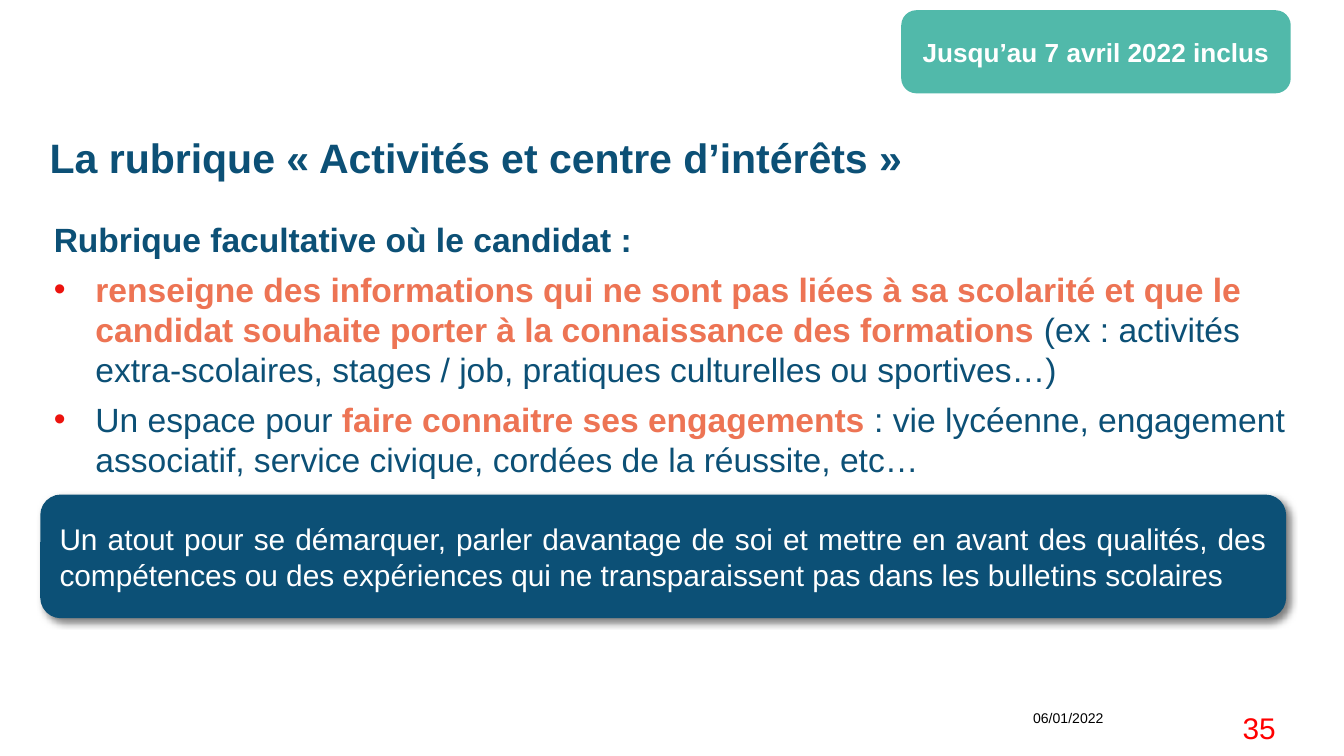
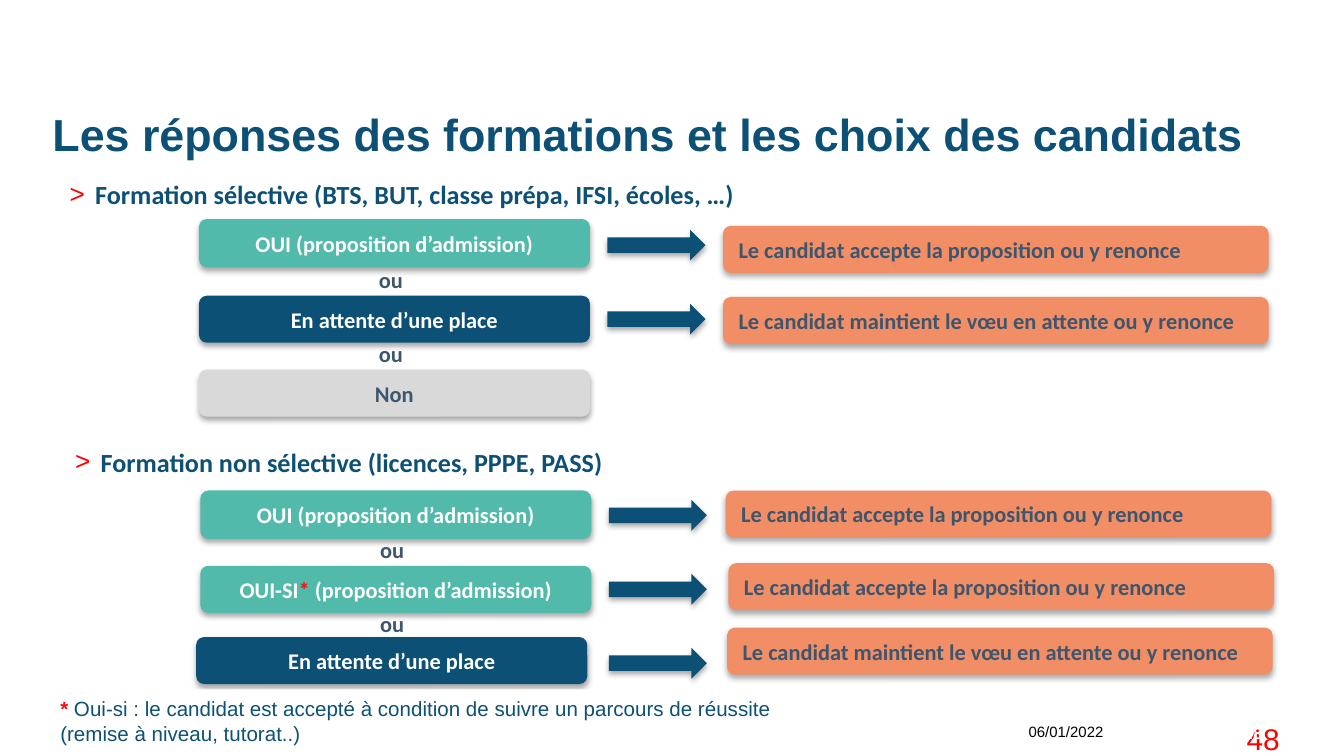
from lxml.etree import SubElement
from pptx import Presentation
from pptx.dml.color import RGBColor
from pptx.enum.shapes import MSO_SHAPE
from pptx.enum.text import MSO_ANCHOR, MSO_AUTO_SIZE, PP_ALIGN
from pptx.oxml.ns import qn
from pptx.util import Inches, Pt

COLORS = {
    "navy": "0C5076", "green": "51B9AA", "mint": "51BAAA", "coral": "ED7454",
    "orange": "F28E65", "slate": "3D566E", "gray": "D9D9D9", "white": "FFFFFF",
    "black": "000000", "red": "FF0000", "crimson": "EC130E",
}
RGB = {name: RGBColor.from_string(value) for name, value in COLORS.items()}

# Shadows: opacity in percent, blur and distance in points, direction in degrees
BANNER_SHADOW = (50, 4, 3, 45)
BUTTON_SHADOW = (35, 3.1, 1.8, 90)


def write(frame, paragraphs, size, color, font="Arial", bold=False,
          align=PP_ALIGN.LEFT, bullet=None, first_bullet=0, after=None):
    """Fill a frame; a paragraph is a string or a list of (text, color, bold)."""
    frame.word_wrap = True
    for index, content in enumerate(paragraphs):
        para = frame.paragraphs[0] if index == 0 else frame.add_paragraph()
        para.alignment = align
        if after is not None:
            para.space_after = Pt(after)
        if bullet and index >= first_bullet:
            mark, mark_color, indent = bullet
            props = para._p.get_or_add_pPr()
            props.set("marL", str(Inches(indent)))
            props.set("indent", str(-Inches(indent)))
            tint = SubElement(props, qn("a:buClr"))
            SubElement(tint, qn("a:srgbClr"), val=COLORS[mark_color])
            SubElement(props, qn("a:buFont"), typeface="Arial")
            SubElement(props, qn("a:buChar"), char=mark)
        para.font.name = font
        para.font.size = Pt(size)
        para.font.bold = bold
        para.font.color.rgb = RGB[color]
        if isinstance(content, str):
            para.add_run().text = content
            continue
        for text, span_color, span_bold in content:
            span = para.add_run()
            span.text = text
            span.font.bold = span_bold
            span.font.color.rgb = RGB[span_color]


def add_box(page, place, fill=None, kind=MSO_SHAPE.ROUNDED_RECTANGLE,
            shadow=None, anchor=MSO_ANCHOR.MIDDLE):
    """Add a filled shape, or a text box when there is no fill."""
    place = [Inches(length) for length in place]
    if fill is None:
        box = page.shapes.add_textbox(*place)
        box.text_frame.vertical_anchor = MSO_ANCHOR.TOP
        return box
    box = page.shapes.add_shape(kind, *place)
    box.fill.solid()
    box.fill.fore_color.rgb = RGB[fill]
    box.line.fill.background()
    box.shadow.inherit = False
    box.text_frame.vertical_anchor = anchor
    if shadow:
        opacity, blur, distance, angle = shadow
        effects = box._element.spPr.find(qn("a:effectLst"))
        outer = SubElement(effects, qn("a:outerShdw"), blurRad=str(Pt(blur)),
                           dist=str(Pt(distance)), dir=str(angle * 60000),
                           algn="ctr", rotWithShape="0")
        tint = SubElement(outer, qn("a:srgbClr"), val=COLORS["black"])
        SubElement(tint, qn("a:alpha"), val=str(opacity * 1000))
    return box


# Widescreen deck, 16 to 9
deck = Presentation()
deck.slide_width = Inches(10)
deck.slide_height = Inches(10) * 9 // 16

# Title, date and page number of each slide
headings = [
    ("La rubrique « Activités et centre d’intérêts »", (0.37, 1.03, 9.21, 0.79), 22,
     7.5, 5.23, "35", (8.31, 5.23, 1.28, 0.39)),
    ("Les réponses des formations et les choix des candidats",
     (0.39, 0.84, 9.61, 0.49), 24, 8, 5.33, "48", (8.34, 5.31, 1.28, 0.39)),
]
pages = []
for text, place, size, date_size, date_top, number, number_place in headings:
    page = deck.slides.add_slide(deck.slide_layouts[5])
    title = page.shapes.title
    title.left, title.top, title.width, title.height = map(Inches, place)
    frame = title.text_frame
    frame.margin_left = frame.margin_right = frame.margin_top = frame.margin_bottom = 0
    frame.vertical_anchor = MSO_ANCHOR.TOP
    frame.auto_size = MSO_AUTO_SIZE.NONE
    write(frame, [text], size, "navy", bold=True)
    frame.paragraphs[0].line_spacing = 0.9
    date = add_box(page, (7.03, date_top, 1.28, 0.39))
    write(date.text_frame, ["06/01/2022"], date_size, "black", align=PP_ALIGN.RIGHT)
    counter = add_box(page, number_place)
    write(counter.text_frame, [number], 16, "red", align=PP_ALIGN.RIGHT)
    pages.append(page)
activities, answers = pages

# Slide 1: optional section and its two points
body = add_box(activities, (0.4, 1.63, 9.21, 3.03))
frame = body.text_frame
frame.margin_left = frame.margin_right = frame.margin_top = frame.margin_bottom = 0
write(frame, [
    [("Rubrique facultative où le candidat :", "navy", True)],
    [("renseigne des informations qui ne sont pas liées à sa scolarité et que le "
      "candidat souhaite porter à la connaissance des formations ", "coral", True),
     ("(ex : activités extra-scolaires, stages / job, pratiques culturelles ou "
      "sportives…)", "navy", False)],
    [("Un espace pour ", "navy", False),
     ("faire connaitre ses engagements ", "coral", True),
     (": vie lycéenne, engagement associatif, service civique, cordées de la "
      "réussite, etc…", "navy", False)],
], 18, "navy", bullet=("•", "crimson", 0.31), first_bullet=1, after=5)

# Slide 1: banner and deadline
banner = add_box(activities, (0.3, 3.68, 9.27, 0.92), "navy", shadow=BANNER_SHADOW)
write(banner.text_frame, [
    "Un atout pour se démarquer, parler davantage de soi et mettre en avant des "
    "qualités, des compétences ou des expériences qui ne transparaissent pas dans "
    "les bulletins scolaires"], 16, "white", align=PP_ALIGN.JUSTIFY)
deadline = add_box(activities, (6.72, 0.09, 2.87, 0.59), "green")
deadline.line.color.rgb = RGB["green"]
deadline.line.width = Pt(2)
write(deadline.text_frame, ["Jusqu’au 7 avril 2022 inclus"], 14, "white",
      bold=True, align=PP_ALIGN.CENTER)

# Slide 2: each answer has left, top, height, label, fill, text color
# and the candidate's reply (left, top, text)
YES = "OUI (proposition d’admission)"
YES_IF = [("OUI-SI", "white", True), ("*", "crimson", True),
          (" (proposition d’admission)", "white", True)]
WAITING = "En attente d’une place"
ACCEPT = "Le candidat accepte la proposition ou y renonce"
KEEP = "Le candidat maintient le vœu en attente ou y renonce"
groups = [
    ("Formation sélective (BTS, BUT, classe prépa, IFSI, écoles, …)",
     (0.42, 1.28, 9.37, 0.33), 1.63, 2.72, [
         (1.48, 1.63, 0.36, YES, "mint", "white", (5.38, 1.68, ACCEPT)),
         (1.48, 2.2, 0.35, WAITING, "navy", "white", (5.38, 2.21, KEEP)),
         (1.48, 2.75, 0.35, "Non", "gray", "slate", None),
     ]),
    ("Formation non sélective (licences, PPPE, PASS)",
     (0.46, 3.27, 8.92, 0.53), 3.64, 2.73, [
         (1.49, 3.65, 0.36, YES, "mint", "white", (5.4, 3.65, ACCEPT)),
         (1.49, 4.21, 0.35, YES_IF, "mint", "white", (5.42, 4.19, ACCEPT)),
         (1.46, 4.74, 0.35, WAITING, "navy", "white", (5.41, 4.67, KEEP)),
     ]),
]
ROW_STEP = 0.55
for heading, heading_place, first_top, or_left, rows in groups:
    box = add_box(answers, heading_place)
    write(box.text_frame, [heading], 14, "navy", "Calibri", True,
          bullet=(">", "red", 0.19))
    for index, (left, top, height, label, fill, color, reply) in enumerate(rows):
        row_top = first_top + index * ROW_STEP
        answer = add_box(answers, (left, top, 2.91, height), fill,
                         shadow=BUTTON_SHADOW)
        write(answer.text_frame, [label], 12, color, "Calibri", True, PP_ALIGN.CENTER)
        if index < len(rows) - 1:
            choice = add_box(answers, (or_left, row_top + 0.3, 0.77, 0.3))
            write(choice.text_frame, ["ou"], 12, "slate", "Calibri", True)
        if reply:
            reply_left, reply_top, reply_text = reply
            add_box(answers, (or_left + 1.8, row_top + 0.08, 0.73, 0.23), "navy",
                    MSO_SHAPE.RIGHT_ARROW, BUTTON_SHADOW)
            box = add_box(answers, (reply_left, reply_top, 4.06, 0.35), "orange",
                          shadow=BUTTON_SHADOW)
            write(box.text_frame, [reply_text], 12, "slate", "Calibri", True)

# Slide 2: small white page number and footnote
badge = add_box(answers, (9.12, 5.31, 0.41, 0.29))
badge.text_frame.vertical_anchor = MSO_ANCHOR.MIDDLE
write(badge.text_frame, ["48"], 9, "white", "Calibri", True, PP_ALIGN.CENTER)
footnote = add_box(answers, (0.35, 5.13, 6.22, 0.47), "white", MSO_SHAPE.RECTANGLE,
                   anchor=MSO_ANCHOR.TOP)
write(footnote.text_frame, [
    [("*", "crimson", True),
     (" Oui-si : le candidat est accepté à condition de suivre un parcours de réussite",
      "navy", False)],
    "(remise à niveau, tutorat..)",
], 11, "navy")

deck.save("out.pptx")
